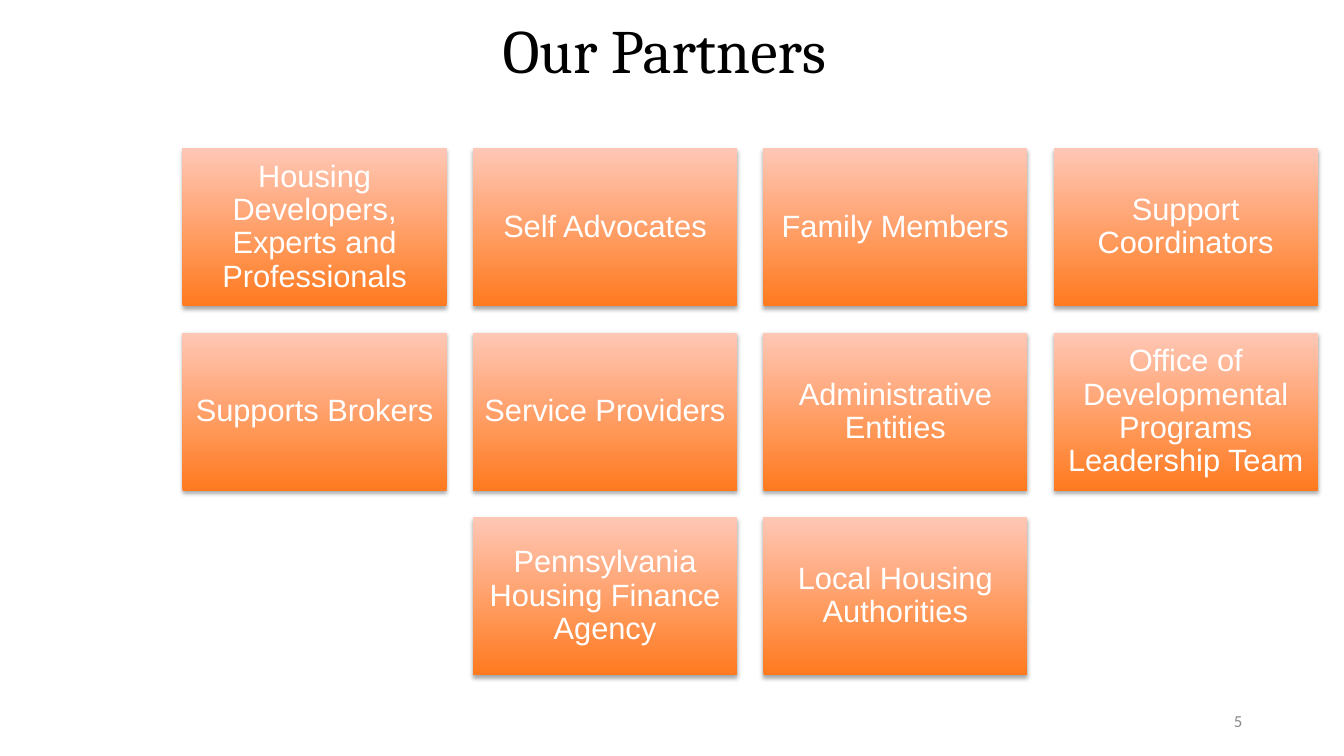
import pptx
import pptx.util
import pptx.dml.color
import pptx.enum.shapes
import pptx.enum.text
import pptx.oxml
from lxml import etree

Inches, Pt = pptx.util.Inches, pptx.util.Pt
RGB = pptx.dml.color.RGBColor.from_string
ALIGN = pptx.enum.text.PP_ALIGN

THEME = {
    "title": ("Cambria", 44, "000000"),
    "card": ("Arial", 22, "FFFFFF"),
    "number": ("Calibri", 12, "888888"),
    "card_bottom": "FF7A1F",
    "card_top": "FFC7B6",
}
PARTNER_ROWS = [
    ["Housing Developers, Experts and Professionals", "Self Advocates",
     "Family Members", "Support Coordinators"],
    ["Supports Brokers", "Service Providers", "Administrative Entities",
     "Office of Developmental Programs Leadership Team"],
    ["Pennsylvania Housing Finance Agency", "Local Housing Authorities"],
]
COLUMNS = 4
GRID_LEFT, GRID_TOP = 1.81, 1.47
CARD_W, CARD_H, GAP = 2.62, 1.57, 0.26


def write(shape, text, style, align, margins=(0.1, 0.05), line_spacing=1.0):
    """Fill a shape with one vertically centred paragraph in a theme style."""
    tf = shape.text_frame
    tf.word_wrap = True
    tf.vertical_anchor = pptx.enum.text.MSO_ANCHOR.MIDDLE
    tf.margin_left = tf.margin_right = Inches(margins[0])
    tf.margin_top = tf.margin_bottom = Inches(margins[1])
    p = tf.paragraphs[0]
    p.alignment = align
    p.line_spacing = line_spacing
    r = p.add_run()
    r.text = text
    font, size, color = THEME[style]
    r.font.name = font
    r.font.size = Pt(size)
    r.font.color.rgb = RGB(color)


def add_soft_shadow(shape):
    shape.shadow.inherit = False
    effects = shape._element.spPr.find(pptx.oxml.ns.qn("a:effectLst"))
    shadow = etree.SubElement(
        effects, pptx.oxml.ns.qn("a:outerShdw"),
        blurRad=str(Pt(3.1)), dist=str(Pt(1.8)), dir="5400000", rotWithShape="0")
    color = etree.SubElement(shadow, pptx.oxml.ns.qn("a:srgbClr"), val="000000")
    etree.SubElement(color, pptx.oxml.ns.qn("a:alpha"), val="35000")


prs = pptx.Presentation()
prs.slide_width, prs.slide_height = Inches(13.33), Inches(7.5)
s = prs.slides.add_slide(prs.slide_layouts[6])

title = s.shapes.add_textbox(0, 0, Inches(13.18), Inches(1.07))
write(title, "Our Partners", "title", ALIGN.CENTER, line_spacing=0.9)

number = s.shapes.add_textbox(Inches(9.42), Inches(6.95), Inches(3), Inches(0.4))
write(number, "5", "number", ALIGN.RIGHT)
number.text_frame.paragraphs[0].space_after = Pt(6)

for row, partners in enumerate(PARTNER_ROWS):
    first_column = (COLUMNS - len(partners)) // 2  # centres a short row
    for column, partner in enumerate(partners, start=first_column):
        card = s.shapes.add_shape(
            pptx.enum.shapes.MSO_SHAPE.RECTANGLE,
            Inches(GRID_LEFT + column * (CARD_W + GAP)),
            Inches(GRID_TOP + row * (CARD_H + GAP)),
            Inches(CARD_W), Inches(CARD_H))
        card.line.fill.background()
        card.fill.gradient()
        card.fill.gradient_angle = 90
        for stop, name in zip(card.fill.gradient_stops, ("card_bottom", "card_top")):
            stop.color.rgb = RGB(THEME[name])
        add_soft_shadow(card)
        write(card, partner, "card", ALIGN.CENTER, (0.09, 0.09), 0.9)

prs.save("out.pptx")
